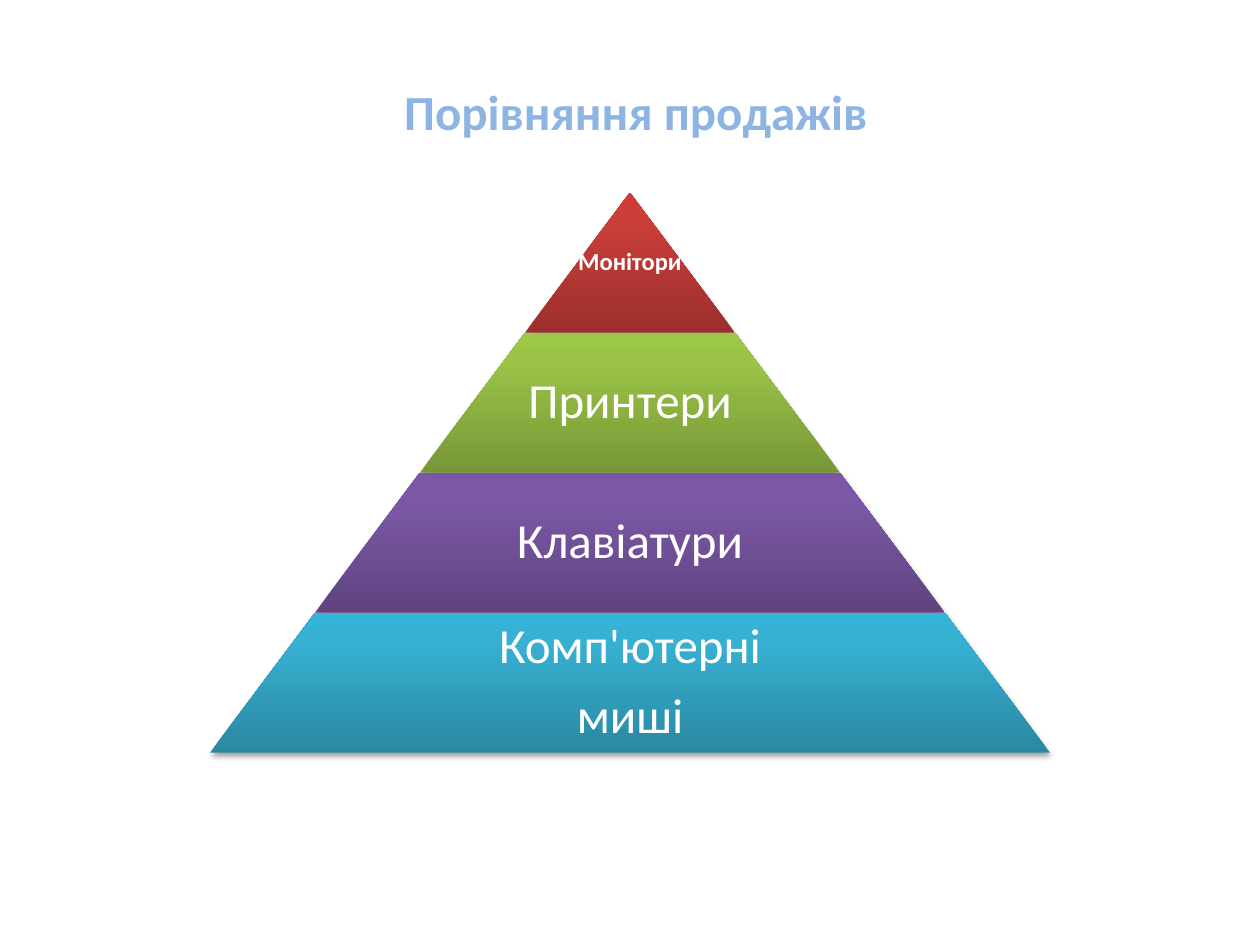
import pptx
import pptx.util
import pptx.dml.color
import pptx.enum.shapes
import pptx.enum.text
import pptx.oxml
import pptx.oxml.ns
from lxml import etree

Inches, Pt = pptx.util.Inches, pptx.util.Pt
RGB = pptx.dml.color.RGBColor.from_string
qn = pptx.oxml.ns.qn

W, H = 10, 7.5
TIER_H = H * 4 / 27
STEP_W = W / 6  # each tier is this much wider than the one above
TOP = 1.53
FONT = "Calibri"
COLORS = {
    "title": "8EB4E3",
    "text": "FFFFFF",
    "shadow": "000000",
    "red": ("9C2F2D", "CB3E3A", "CE3B37"),
    "green": ("779737", "9BC348", "9DC746"),
    "purple": ("5F4480", "7B58A6", "7C57A8"),
    "blue": ("2A88A2", "37B1D2", "34B4D6"),
}
# gradient, lines of text, size, bold, text width as share of tier, inset
TIERS = [
    ("red", ["Монітори"], 14, True, 1, 0.02),
    ("green", ["Принтери"], 28, False, 0.65, 0.04),
    ("purple", ["Клавіатури"], 28, False, 0.65, 0.04),
    ("blue", ["Комп'ютерні", "миші"], 28, False, 0.65, 0.04),
]


def add_color(parent, tag, color, **attrs):
    el = etree.SubElement(parent, qn(tag), **attrs)
    return etree.SubElement(el, qn("a:srgbClr"), val=color)


def add_run(p, text, size, color, bold):
    p.alignment = pptx.enum.text.PP_ALIGN.CENTER
    r = p.add_run()
    r.text = text
    r.font.name, r.font.size, r.font.bold = FONT, Pt(size), bold
    r.font.color.rgb = RGB(color)


def set_gradient(s, colors):
    s.fill.gradient()
    s.fill.gradient_angle = 90
    stops = s._element.spPr.find(".//" + qn("a:gsLst"))
    for stop in list(stops):
        stops.remove(stop)
    for pos, color in zip((0, 80, 100), colors):
        add_color(stops, "a:gs", color, pos=str(pos * 1000))


def set_shadow(s):
    s.shadow.inherit = False
    effects = s._element.spPr.find(qn("a:effectLst"))
    color = add_color(effects, "a:outerShdw", COLORS["shadow"],
                      blurRad=str(Pt(3.1)), dist=str(Pt(1.8)),
                      dir="5400000", rotWithShape="0")
    etree.SubElement(color, qn("a:alpha"), val="35000")


def centred(width, top):
    return [Inches(v) for v in ((W - width) / 2, top, width, TIER_H)]


def add_tier(slide, width, top, colors):
    s = slide.shapes.add_shape(pptx.enum.shapes.MSO_SHAPE.TRAPEZOID,
                               *centred(width, top))
    s.adjustments[0] = 0.75
    s.line.fill.background()
    set_gradient(s, colors)
    set_shadow(s)


def add_label(slide, width, top, lines, size, bold, inset):
    tf = slide.shapes.add_textbox(*centred(width, top)).text_frame
    tf.word_wrap = True
    tf.vertical_anchor = pptx.enum.text.MSO_ANCHOR.MIDDLE
    tf.margin_left = tf.margin_right = Inches(inset)
    tf.margin_top = tf.margin_bottom = Inches(inset)
    for i, line in enumerate(lines):
        p = tf.add_paragraph() if i else tf.paragraphs[0]
        p.line_spacing = 0.9
        p.space_after = Pt(0.35 * size)
        add_run(p, line, size, COLORS["text"], bold)


def set_title(slide, text):
    s = slide.shapes.title
    s.left, s.top, s.width, s.height = [Inches(v) for v in (2.42, 0.6, 5.25, 0.57)]
    tf = s.text_frame
    tf.word_wrap = True
    tf.auto_size = pptx.enum.text.MSO_AUTO_SIZE.NONE
    tf.vertical_anchor = pptx.enum.text.MSO_ANCHOR.TOP
    add_run(tf.paragraphs[0], text, 28, COLORS["title"], True)


def main():
    prs = pptx.Presentation()
    prs.slide_width, prs.slide_height = Inches(W), Inches(H)
    slide = prs.slides.add_slide(prs.slide_layouts[5])
    set_title(slide, "Порівняння продажів")

    # Pyramid, from the tip down
    for i, (name, lines, size, bold, share, inset) in enumerate(TIERS):
        width, top = STEP_W * (i + 1), TOP + TIER_H * i
        add_tier(slide, width, top, COLORS[name])
        add_label(slide, width * share, top, lines, size, bold, inset)

    prs.save("out.pptx")


if __name__ == "__main__":
    main()
